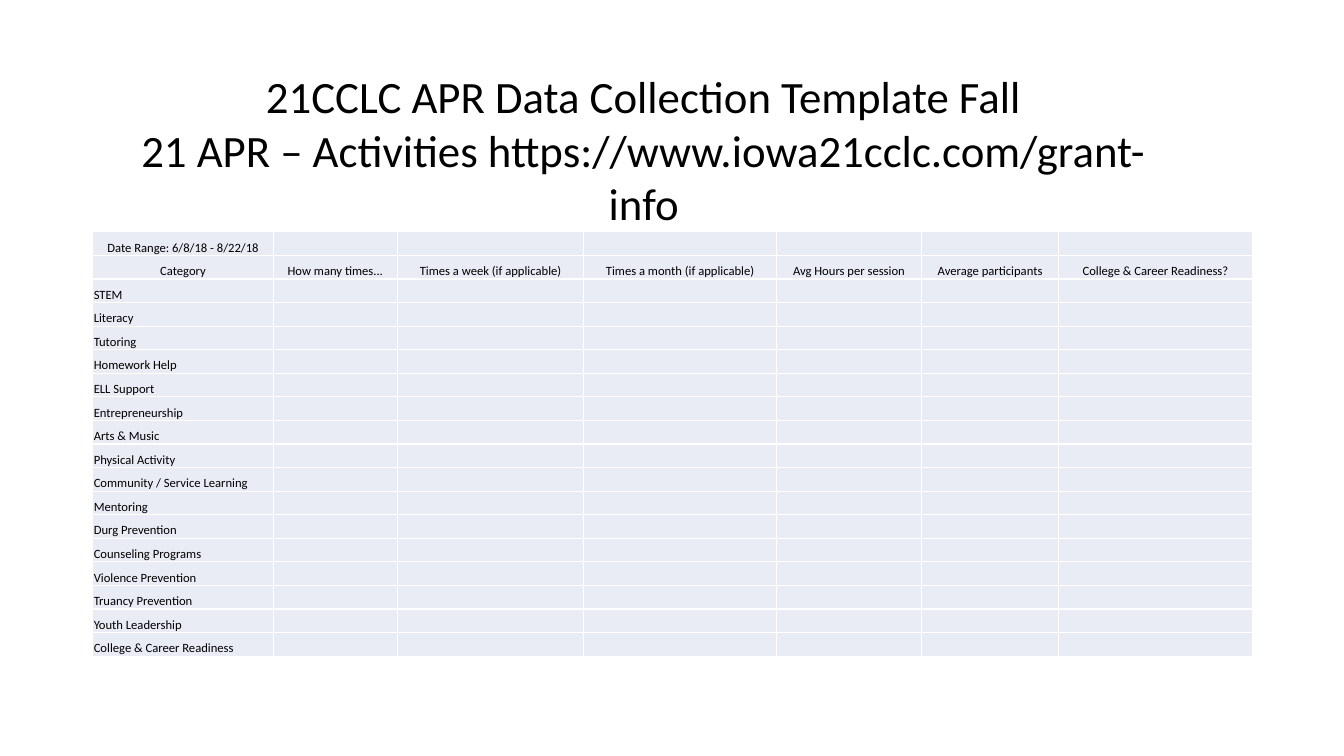
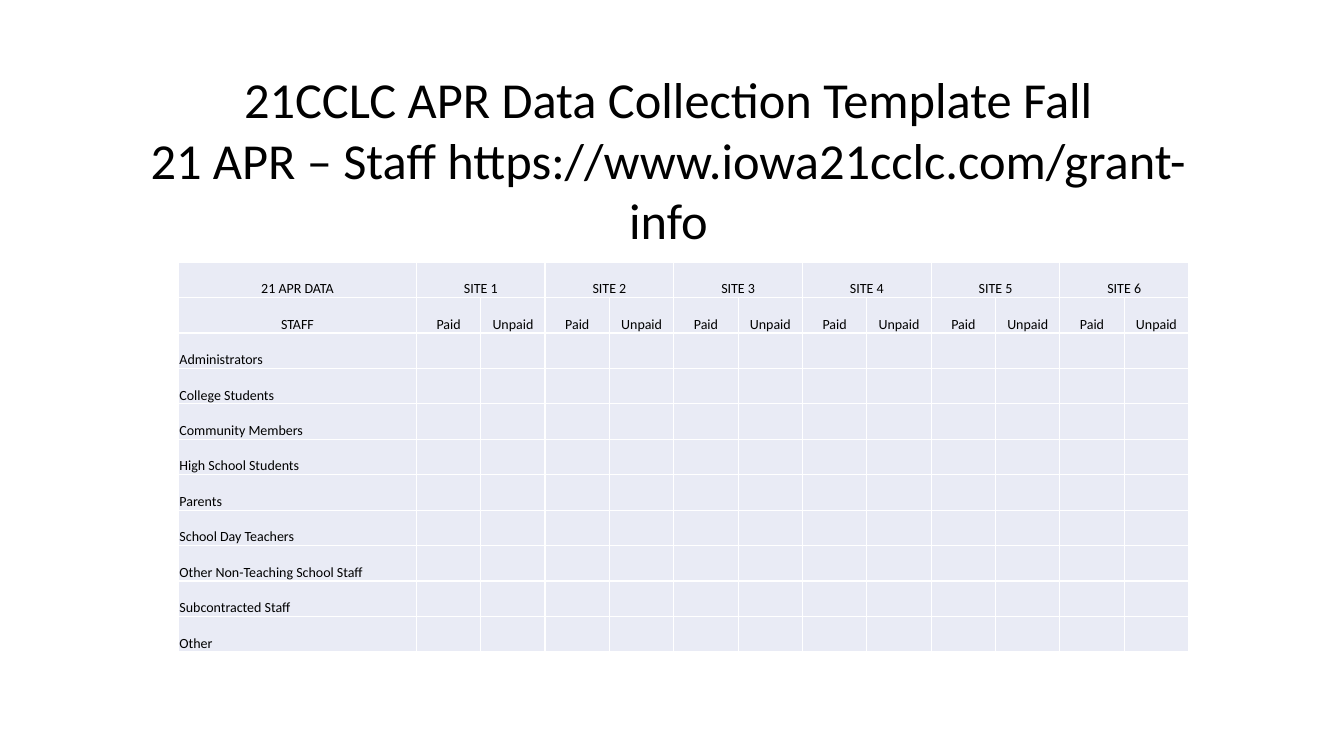
import pptx
import pptx.util
import pptx.dml.color
import pptx.enum.text
import pptx.oxml.ns
import lxml.etree

Inches = pptx.util.Inches
Pt = pptx.util.Pt
ALIGN = pptx.enum.text.PP_ALIGN

# Shared look
FONT = "Calibri"
INK = "000000"
BAND = "E9EBF5"
RULE = "FFFFFF"
HEAD = "21CCLC APR Data Collection Template Fall"
LINK = "https://www.iowa21cclc.com/grant-info"

# Activities table
FIELDS = ["Category", "How many times...", "Times a week (if applicable)",
          "Times a month (if applicable)", "Avg Hours per session",
          "Average participants", "College & Career Readiness?"]
TOPICS = ["STEM", "Literacy", "Tutoring", "Homework Help", "ELL Support",
          "Entrepreneurship", "Arts & Music", "Physical Activity",
          "Community / Service Learning", "Mentoring", "Durg Prevention",
          "Counseling Programs", "Violence Prevention", "Truancy Prevention",
          "Youth Leadership", "College & Career Readiness"]
WIDTHS = [1.79, 1.23, 1.85, 1.91, 1.44, 1.36, 1.92]

# Staff table
ROLES = ["Administrators", "College Students", "Community Members",
         "High School Students", "Parents", "School Day Teachers",
         "Other Non-Teaching School Staff", "Subcontracted Staff", "Other"]
SITES = 6


def color(code):
    return pptx.dml.color.RGBColor.from_string(code)


def style(para, size, align):
    para.alignment = align
    for run in para.runs:
        run.font.size = Pt(size)
        run.font.name = FONT
        run.font.color.rgb = color(INK)


def add_title(slide, box, size, topic):
    """Two centred lines: the shared heading, then the topic and link."""
    frame = slide.shapes.add_textbox(*map(Inches, box)).text_frame
    frame.word_wrap = True
    frame.auto_size = pptx.enum.text.MSO_AUTO_SIZE.SHAPE_TO_FIT_TEXT
    frame.text = f"{HEAD}\n21 APR – {topic} {LINK}"
    for para in frame.paragraphs:
        style(para, size, ALIGN.CENTER)


def add_rules(cell):
    """Thin lines on all four sides of a cell."""
    props = cell._tc.get_or_add_tcPr()
    qn = pptx.oxml.ns.qn
    for side in ("a:lnL", "a:lnR", "a:lnT", "a:lnB"):
        line = lxml.etree.SubElement(props, qn(side), w=str(Pt(1)))
        fill = lxml.etree.SubElement(line, qn("a:solidFill"))
        lxml.etree.SubElement(fill, qn("a:srgbClr"), val=RULE)


def fill_cell(cell, text, size, align):
    cell.margin_left = cell.margin_right = cell.margin_top = Inches(0.01)
    cell.margin_bottom = 0
    cell.vertical_anchor = pptx.enum.text.MSO_ANCHOR.BOTTOM
    add_rules(cell)
    cell.fill.solid()
    cell.fill.fore_color.rgb = color(BAND)
    para = cell.text_frame.paragraphs[0]
    if text:
        para.text = text
    else:
        # Keeps an empty cell from stretching its row
        end = para._p.get_or_add_endParaRPr()
        end.set("sz", str(size * 100))
    style(para, size, align)


def add_grid(slide, box, widths, rows, size):
    """Table with two centred head rows and left-set labels below."""
    shape = slide.shapes.add_table(len(rows), len(widths), *map(Inches, box))
    table = shape.table
    table.first_row = table.horz_banding = False
    for col, width in zip(table.columns, widths):
        col.width = Inches(width)
    for r, row in enumerate(rows):
        table.rows[r].height = Inches(box[3] / len(rows))
        align = ALIGN.CENTER if r < 2 else ALIGN.LEFT
        texts = row + [""] * (len(widths) - len(row))
        for c, text in enumerate(texts):
            fill_cell(table.cell(r, c), text, size, align)
    return table


def add_tasks(slide):
    rows = [["Date Range: 6/8/18 - 8/22/18"], FIELDS]
    rows += [[topic] for topic in TOPICS]
    add_grid(slide, (0.92, 2.3, 11.5, 4.21), WIDTHS, rows, 9)
    add_title(slide, (1.02, 0.63, 10.73, 1.18), 32, "Activities")


def add_staff(slide):
    box = (1.77, 2.6, 10.02, 3.87)
    first = 2.36
    count = 2 * SITES
    widths = [first] + [(box[2] - first) / count] * count
    sites = ["21 APR DATA"]
    for n in range(1, SITES + 1):
        sites += [f"SITE {n}", ""]
    rows = [sites, ["STAFF"] + ["Paid", "Unpaid"] * SITES]
    rows += [[role] for role in ROLES]
    table = add_grid(slide, box, widths, rows, 10)
    # Each site spans its paid and unpaid columns
    for c in range(1, count, 2):
        table.cell(0, c).merge(table.cell(0, c + 1))
    add_title(slide, (1.02, 0.63, 11.22, 1.31), 36, "Staff")


def main():
    deck = pptx.Presentation()
    deck.slide_width = Inches(13.33)
    deck.slide_height = Inches(7.5)
    for build in (add_tasks, add_staff):
        build(deck.slides.add_slide(deck.slide_layouts[6]))
    deck.save("out.pptx")


if __name__ == "__main__":
    main()
